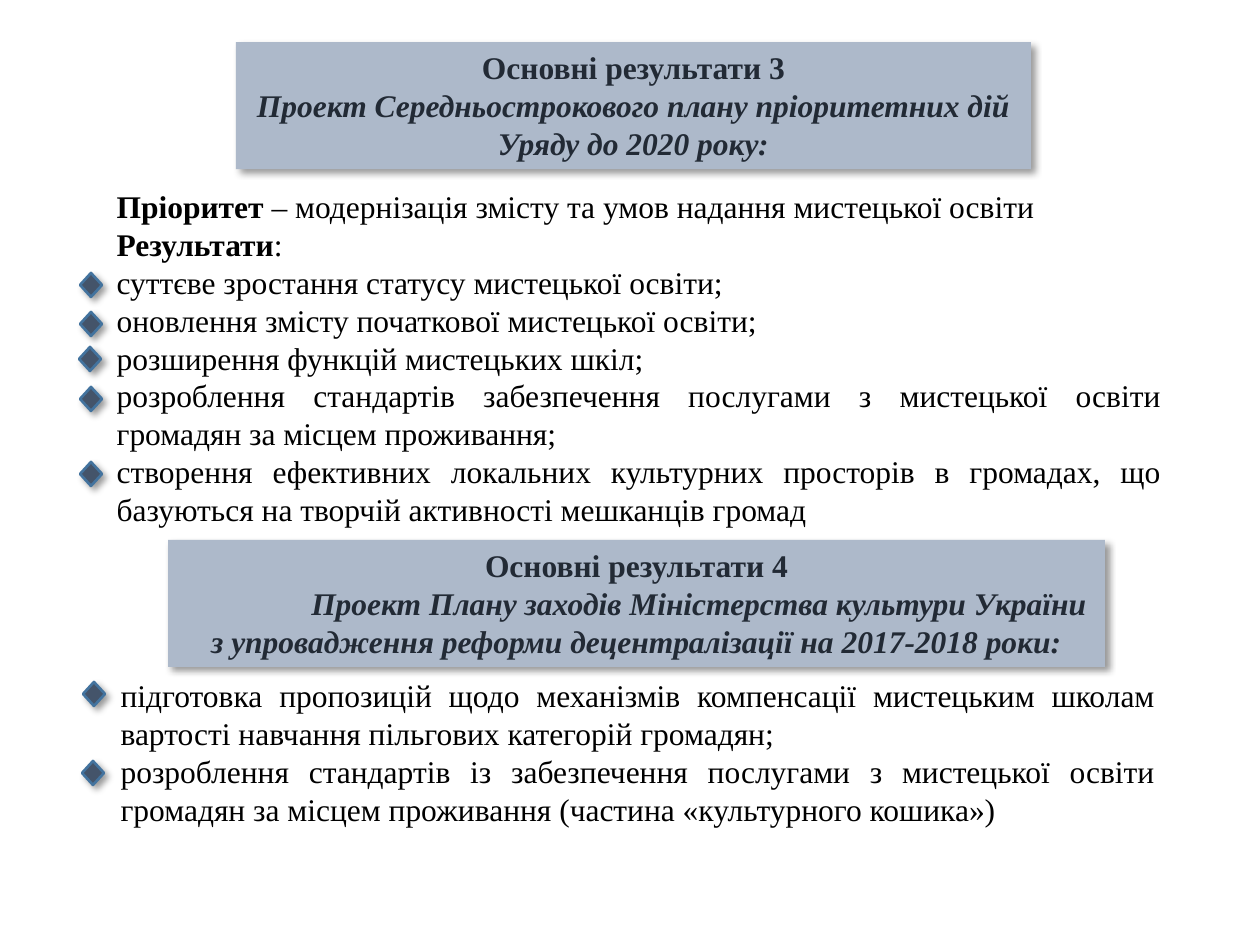
from dataclasses import dataclass

from pptx import Presentation
from pptx.dml.color import RGBColor
from pptx.enum.shapes import MSO_SHAPE
from pptx.enum.text import MSO_ANCHOR, MSO_AUTO_SIZE, PP_ALIGN
from pptx.oxml import parse_xml
from pptx.oxml.ns import nsdecls, qn
from pptx.util import Emu, Pt


@dataclass(frozen=True)
class Theme:
    """Colours and type of the slide."""

    font: str = "Times New Roman"
    size: int = 18
    text: str = "000000"
    banner_text: str = "222A35"
    banner_fill: str = "ADB9CA"
    marker_fill: str = "44546A"
    marker_line: str = "43739E"
    marker_line_width: float = 1.5


THEME = Theme()
TAB_STOP = 125
DEFAULT_TAB = 126
PRIORITY_LIST = [
    ("Пріоритет", " – модернізація змісту та умов надання мистецької освіти"),
    ("Результати", ":"),
    ("", "суттєве зростання статусу мистецької освіти;"),
    ("", "оновлення змісту початкової мистецької освіти;"),
    ("", "розширення функцій мистецьких шкіл;"),
    ("", "розроблення стандартів забезпечення послугами з мистецької освіти "
         "громадян за місцем проживання;"),
    ("", "створення ефективних локальних культурних просторів в громадах, що "
         "базуються на творчій активності мешканців громад"),
]
MEASURES_LIST = [
    ("", "підготовка пропозицій щодо механізмів компенсації мистецьким школам "
         "вартості навчання пільгових категорій громадян;"),
    ("", "розроблення стандартів із забезпечення послугами з мистецької освіти "
         "громадян за місцем проживання (частина «культурного кошика»)"),
]
MARKERS = [(80, 273), (80, 312), (79, 347), (80, 387), (80, 462), (83, 682), (82, 761)]


def px(length):
    """Turn pixels into EMU."""
    return Emu(round(length * 914400 / 126))


def place(shape, left, top, width, height):
    """Move and size a shape in pixels."""
    shape.left, shape.top = px(left), px(top)
    shape.width, shape.height = px(width), px(height)


def add_shadow(shape):
    """Give a shape a soft shadow to the lower right."""
    shape.shadow.inherit = False
    shape._element.spPr.find(qn("a:effectLst")).append(parse_xml(
        f'<a:outerShdw {nsdecls("a")} blurRad="{Pt(4)}" dist="{Pt(3)}" dir="2700000" '
        'algn="tl" rotWithShape="0"><a:srgbClr val="000000"><a:alpha val="40000"/>'
        '</a:srgbClr></a:outerShdw>'))


def prepare_frame(shape):
    """Set wrapping, fitting and anchor, and return the text frame."""
    frame = shape.text_frame
    frame.word_wrap = True
    frame.auto_size = MSO_AUTO_SIZE.SHAPE_TO_FIT_TEXT
    frame.vertical_anchor = MSO_ANCHOR.TOP
    return frame


def remove_bullet(paragraph):
    """Clear the bullet and the indent of a list paragraph."""
    properties = paragraph._p.get_or_add_pPr()
    properties.set("marL", "0")
    properties.set("indent", "0")
    properties.append(parse_xml(f'<a:buNone {nsdecls("a")}/>'))


def format_paragraph(paragraph, alignment, color):
    """Set tabs, spacing and type of a paragraph."""
    properties = paragraph._p.get_or_add_pPr()
    properties.set("defTabSz", str(px(DEFAULT_TAB)))
    properties.append(parse_xml(
        f'<a:tabLst {nsdecls("a")}><a:tab pos="{px(TAB_STOP)}" algn="l"/></a:tabLst>'))
    paragraph.alignment = alignment
    paragraph.space_before = Pt(0)
    paragraph.font.name = THEME.font
    paragraph.font.size = Pt(THEME.size)
    paragraph.font.color.rgb = RGBColor.from_string(color)


def fill_banner(shape, box, heading, subject):
    """Turn a shape into a heading banner."""
    place(shape, *box)
    shape.fill.solid()
    shape.fill.fore_color.rgb = RGBColor.from_string(THEME.banner_fill)
    shape.line.fill.background()
    add_shadow(shape)
    frame = prepare_frame(shape)
    for paragraph, text in ((frame.paragraphs[0], heading), (frame.add_paragraph(), subject)):
        format_paragraph(paragraph, PP_ALIGN.CENTER, THEME.banner_text)
        paragraph.font.bold = True
        paragraph.font.italic = text == subject
        paragraph.add_run().text = text


def fill_list(shape, box, items):
    """Write items, each with an optional bold lead, into a placeholder."""
    place(shape, *box)
    frame = prepare_frame(shape)
    for index, (lead, text) in enumerate(items):
        paragraph = frame.add_paragraph() if index else frame.paragraphs[0]
        remove_bullet(paragraph)
        format_paragraph(paragraph, PP_ALIGN.JUSTIFY, THEME.text)
        if lead:
            run = paragraph.add_run()
            run.text = lead
            run.font.bold = True
        paragraph.add_run().text = text


def add_marker(slide, left, top):
    """Add a diamond beside a list item."""
    marker = slide.shapes.add_shape(MSO_SHAPE.DIAMOND, px(left), px(top), px(22), px(24))
    marker.fill.solid()
    marker.fill.fore_color.rgb = RGBColor.from_string(THEME.marker_fill)
    marker.line.color.rgb = RGBColor.from_string(THEME.marker_line)
    marker.line.width = Pt(THEME.marker_line_width)
    add_shadow(marker)


def main():
    """Build and save the slide."""
    presentation = Presentation()
    presentation.slide_width, presentation.slide_height = px(1260), px(945)
    slide = presentation.slides.add_slide(presentation.slide_layouts[3])
    title, priorities, measures = slide.placeholders
    fill_banner(title, (236, 42, 795, 127), "Основні результати 3",
                "Проект Середньострокового плану пріоритетних дій Уряду до 2020 року:")
    fill_list(priorities, (104, 181, 1070, 394), PRIORITY_LIST)
    banner = slide.shapes.add_shape(MSO_SHAPE.RECTANGLE, 0, 0, 0, 0)
    fill_banner(banner, (168, 540, 937, 127), "Основні результати 4",
                "\tПроект Плану заходів Міністерства культури України "
                "з упровадження реформи децентралізації на 2017-2018 роки:")
    fill_list(measures, (108, 670, 1060, 165), MEASURES_LIST)
    for left, top in MARKERS:
        add_marker(slide, left, top)
    presentation.save("out.pptx")


if __name__ == "__main__":
    main()
